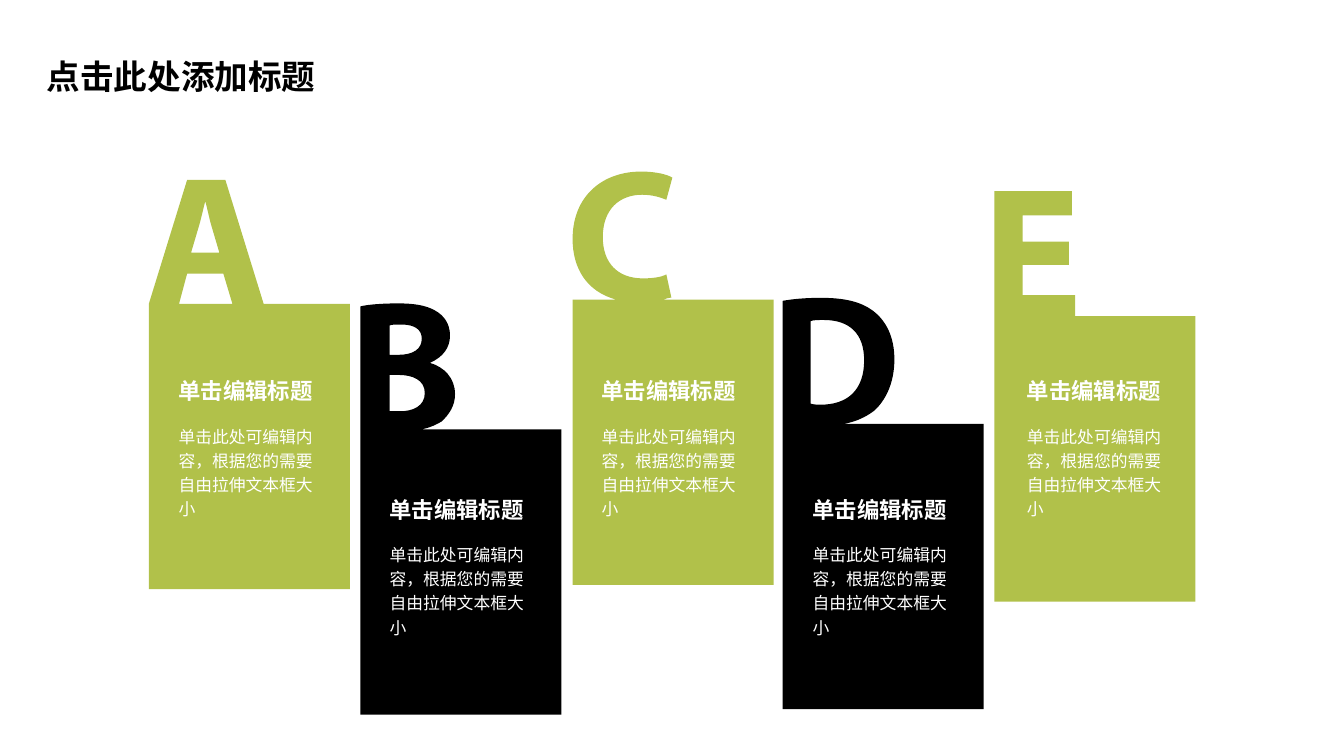
from lxml.etree import SubElement
from pptx import Presentation
from pptx.dml.color import RGBColor
from pptx.enum.text import MSO_AUTO_SIZE as AutoSize
from pptx.oxml.ns import qn
from pptx.util import Cm, Pt

BLACK = RGBColor(0x00, 0x00, 0x00)
WHITE = RGBColor(0xFF, 0xFF, 0xFF)
GREEN = RGBColor(0xB1, 0xC1, 0x4A)

UNIT = Cm(0.0254)
CARD_BOX = [(0, 0), (0, 283), (199.5, 283), (199.5, 0)]

LETTER_A = [
    [(114, 0), (76, -123), (38, -123)],
    [(50, -78), (52, -85, 54, -94, 56, -102), (58, -95, 60, -85, 62, -78),
     (70, -51), (42, -51)],
    [(38, -30), (74, -30), (83, 0), (30, 0)],
]
LETTER_B = [
    [(61, 0), (70, -2, 76, -5, 81, -8), (88, -15, 94, -23, 94, -35),
     (94, -51, 83, -62, 69, -66), (83, -72, 89, -82, 89, -93),
     (89, -105, 83, -113, 74, -118), (65, -123, 54, -125, 37, -125),
     (23, -125, 8, -124, 0, -122)],
    [(29, -103), (31, -104, 34, -104, 41, -104), (54, -104, 61, -99, 61, -90),
     (61, -80, 53, -74, 38, -74), (29, -74)],
    [(29, -54), (38, -54), (52, -54, 64, -49, 64, -36),
     (64, -23, 52, -18, 40, -18), (35, -18, 31, -18, 29, -18)],
]
LETTER_C = [
    [(90, 0), (93, -1, 96, -2, 98, -2), (93, -25),
     (88, -22, 78, -21, 70, -21), (44, -21, 30, -37, 30, -62),
     (30, -90, 47, -104, 69, -104), (80, -104, 88, -101, 93, -99),
     (99, -121), (94, -124, 83, -127, 68, -127),
     (30, -127, 0, -103, 0, -60), (0, -31, 14, -8, 43, 0)],
]
LETTER_D = [
    [(61, 0), (73, -2, 83, -7, 91, -13), (102, -23, 111, -40, 111, -64),
     (111, -86, 103, -102, 90, -112), (78, -121, 62, -125, 38, -125),
     (24, -125, 11, -124, 0, -122)],
    [(28, -102), (31, -103, 35, -103, 41, -103), (66, -103, 81, -90, 81, -63),
     (81, -33, 64, -19, 38, -19), (35, -19, 31, -19, 28, -20)],
]
LETTER_E = [
    [(80, 0), (80, -21), (28, -21), (28, -51), (74, -51), (74, -74),
     (28, -74), (28, -100), (77, -100), (77, -124), (0, -124)],
]

CARDS = [
    (LETTER_A, GREEN, 3.75, 7.66, 4.5, 9.37),
    (LETTER_B, BLACK, 9.08, 10.82, 9.82, 12.36),
    (LETTER_C, GREEN, 14.43, 7.55, 15.16, 9.37),
    (LETTER_D, BLACK, 19.72, 10.68, 20.48, 12.36),
    (LETTER_E, GREEN, 25.06, 7.97, 25.88, 9.37),
]


def anchors(contour):
    return [(part[-2] * UNIT, part[-1] * UNIT) for part in contour]


def bend_segments(sp, contours, left, top):
    dx, dy = sp.left - left, sp.top - top
    segments = [part for contour in contours for part in contour[1:]]
    lines = list(sp._element.iter(qn("a:lnTo")))
    for line, part in zip(lines, segments):
        if len(part) == 6:
            line.tag = qn("a:cubicBezTo")
            line.clear()
            for x, y in zip(part[::2], part[1::2]):
                SubElement(line, qn("a:pt"), x=str(round(x * UNIT - dx)),
                           y=str(round(y * UNIT - dy)))


def add_letter_card(s, letter, color, left, top):
    outline, *holes = letter
    contours = [outline + CARD_BOX, *holes]
    first, *rest = anchors(contours[0])
    builder = s.shapes.build_freeform(*first, scale=1.0)
    builder.add_line_segments(rest, close=True)
    for hole in holes:
        first, *rest = anchors(hole)
        builder.move_to(*first)
        builder.add_line_segments(rest, close=True)
    sp = builder.convert_to_shape(Cm(left), Cm(top))
    bend_segments(sp, contours, Cm(left), Cm(top))
    sp.shadow.inherit = False
    sp.fill.solid()
    sp.fill.fore_color.rgb = color
    sp.line.fill.background()


def add_text(s, text, left, top, width, height, size, font, color, bold=False):
    sp = s.shapes.add_textbox(Cm(left), Cm(top), Cm(width), Cm(height))
    tf = sp.text_frame
    tf.word_wrap = True
    tf.auto_size = AutoSize.SHAPE_TO_FIT_TEXT
    p = tf.paragraphs[0]
    r = p.add_run()
    r.text = text
    p.font.size = Pt(size)
    p.font.bold = bold
    p.font.color.rgb = color
    p.font.name = font
    r.font.name = font
    SubElement(r.font._element, qn("a:ea"), typeface=font)
    return tf


def add_card_text(s, text, left, top, height, size, bold=False):
    tf = add_text(s, text, left, top, 3.61, height, size, "Arial", WHITE, bold)
    tf.margin_left = tf.margin_right = tf.margin_top = tf.margin_bottom = 0
    p = tf.paragraphs[0]
    p.line_spacing = 1.2
    p.space_before = Pt(size * 0.2)


def main():
    prs = Presentation()
    prs.slide_width, prs.slide_height = Cm(33.87), Cm(19.05)
    s = prs.slides.add_slide(prs.slide_layouts[6])
    add_text(s, "点击此处添加标题", 0.93, 1.28, 7.65, 1.27, 24,
             "Noto Sans CJK SC", BLACK, True)
    for letter, color, left, top, text_left, text_top in CARDS:
        add_letter_card(s, letter, color, left, top)
        add_card_text(s, "单击编辑标题", text_left, text_top, 0.76, 16, True)
        add_card_text(s, "单击此处可编辑内容，根据您的需要自由拉伸文本框大小",
                      text_left, text_top + 1.27, 2.46, 12)
    prs.save("out.pptx")


if __name__ == "__main__":
    main()
